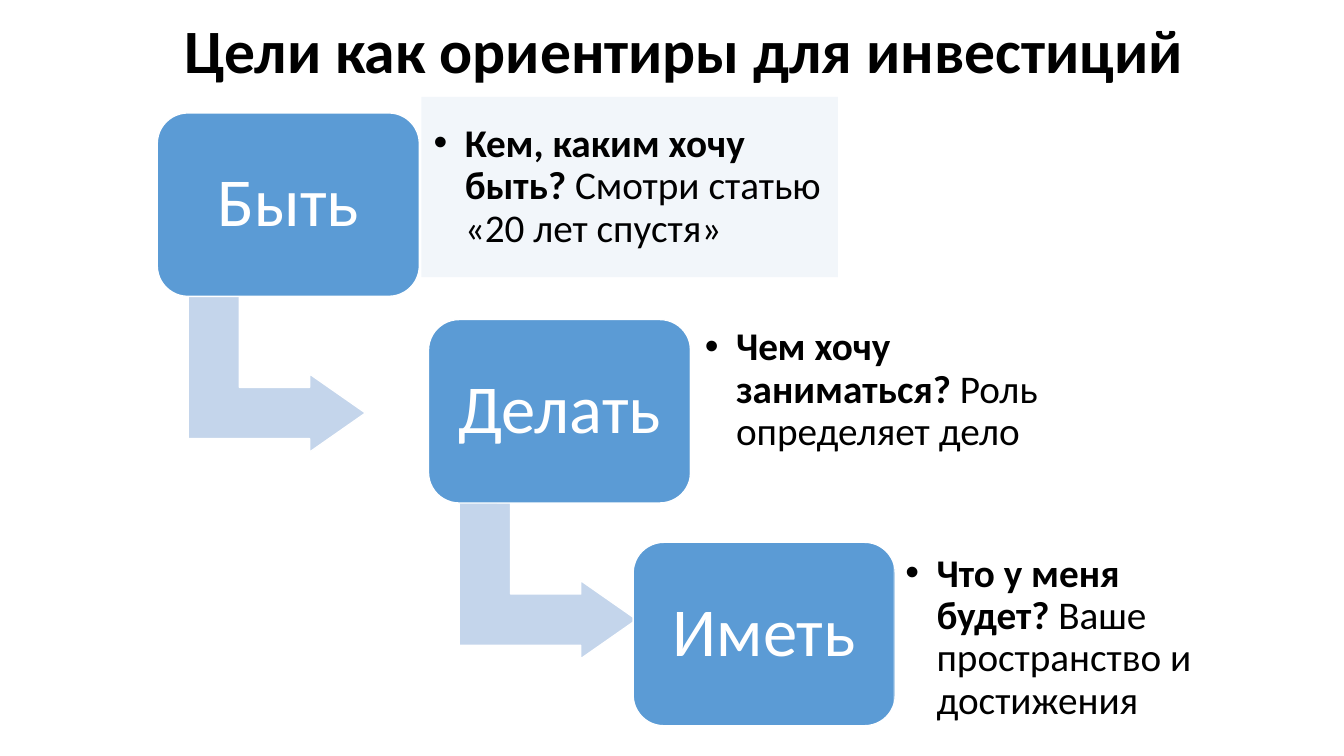
from dataclasses import dataclass

from lxml import etree
from pptx import Presentation
from pptx.dml.color import RGBColor
from pptx.enum.shapes import MSO_SHAPE
from pptx.enum.text import MSO_ANCHOR, MSO_AUTO_SIZE, PP_ALIGN
from pptx.oxml.ns import qn
from pptx.util import Inches, Pt

CENTER, LEFT = PP_ALIGN.CENTER, PP_ALIGN.LEFT
MIDDLE = MSO_ANCHOR.MIDDLE
NO_AUTOFIT = MSO_AUTO_SIZE.NONE
ROUNDED, RECTANGLE = MSO_SHAPE.ROUNDED_RECTANGLE, MSO_SHAPE.RECTANGLE
BENT_ARROW = MSO_SHAPE.BENT_UP_ARROW


@dataclass(frozen=True)
class Theme:
    font: str = "Calibri"
    title_size: int = 44
    step_size: int = 49
    note_size: int = 28
    black: str = "000000"
    white: str = "FFFFFF"
    blue: str = "5B9BD5"
    pale: str = "C4D5EB"


THEME = Theme()


def add_block(preset, place, fill, opacity=None, outlined=True):
    """Add a filled shape; opacity is a percentage."""
    block = page.shapes.add_shape(preset, *map(Inches, place))
    block.shadow.inherit = False
    block.fill.solid()
    block.fill.fore_color.rgb = RGBColor.from_string(fill)
    if outlined:
        block.line.color.rgb = RGBColor.from_string(THEME.white)
        block.line.width = Pt(1)
    else:
        block.line.fill.background()
    if opacity is not None:
        color = block.fill._xPr.find(qn("a:solidFill"))[0]
        etree.SubElement(color, qn("a:alpha"), val=str(opacity * 1000))
    return block


def write_text(box, spans, size, color, align=CENTER, inset=0.1, bullet=False):
    """Fill a shape with one paragraph of (text, bold) spans."""
    frame = box.text_frame
    frame.word_wrap = True
    frame.auto_size = NO_AUTOFIT
    frame.vertical_anchor = MIDDLE
    frame.margin_left = frame.margin_right = Inches(inset)
    frame.margin_top = frame.margin_bottom = Inches(min(inset, 0.15))
    para = frame.paragraphs[0]
    para.alignment = align
    para.line_spacing = 0.9
    for text, bold in spans:
        span = para.add_run()
        span.text = text
        span.font.name = THEME.font
        span.font.size = Pt(size)
        span.font.bold = bold
        span.font.color.rgb = RGBColor.from_string(color)
    if bullet:
        properties = para._p.get_or_add_pPr()
        properties.set("marL", str(Inches(0.31)))
        properties.set("indent", str(-Inches(0.31)))
        etree.SubElement(properties, qn("a:buFont"), typeface="Arial")
        etree.SubElement(properties, qn("a:buChar"), char="•")


deck = Presentation()
deck.slide_width, deck.slide_height = Inches(13.33), Inches(7.5)
page = deck.slides.add_slide(deck.slide_layouts.get_by_name("Title Only"))

title = page.shapes.title
title.left, title.top = Inches(1.04), Inches(0)
title.width, title.height = Inches(11.5), Inches(1.06)
write_text(title, [("Цели как ориентиры для инвестиций", True)],
           THEME.title_size, THEME.black)

# Step name, its corner, note place, note fill, opacity, inset, question, answer
steps = [
    ("Быть", (1.56, 1.12), (4.18, 0.96, 4.13, 1.79), THEME.pale, 21, 0.12,
     "Кем, каким хочу быть? ", "Смотри статью «20 лет спустя»"),
    ("Делать", (4.25, 3.17), (6.84, 3.02, 4.35, 1.71), THEME.white, 53, 0.15,
     "Чем хочу заниматься? ", "Роль определяет дело"),
    ("Иметь", (6.28, 5.38), (8.86, 5.21, 3.27, 2.24), THEME.white, 35, 0.12,
     "Что у меня будет?", " Ваше пространство и достижения"),
]

for name, (left, top), place, fill, opacity, inset, question, answer in steps:
    if name != steps[-1][0]:
        arrow = add_block(BENT_ARROW, (left + 0.41, top + 1.71, 1.55, 1.76), THEME.pale)
        arrow.rotation = 90
        for index, ratio in enumerate((0.328, 0.25, 0.358)):
            arrow.adjustments[index] = ratio

    step = add_block(ROUNDED, (left, top, 2.6, 1.82), THEME.blue)
    step.adjustments[0] = 0.167
    write_text(step, [(name, False)], THEME.step_size, THEME.white)

    note = add_block(RECTANGLE, place, fill, opacity, outlined=False)
    write_text(note, [(question, True), (answer, False)], THEME.note_size,
               THEME.black, align=LEFT, inset=inset, bullet=True)

deck.save("out.pptx")
